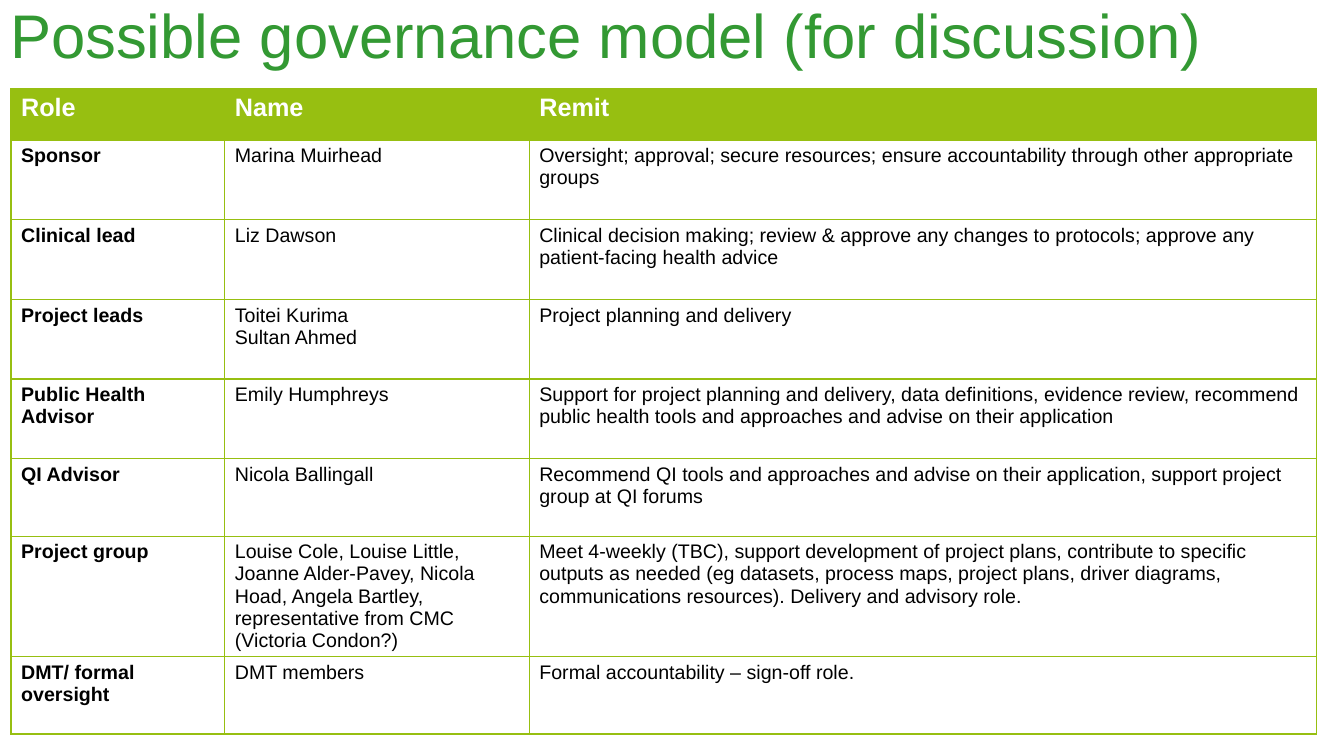
from dataclasses import dataclass

from lxml.etree import SubElement
from pptx import Presentation
from pptx.dml.color import RGBColor
from pptx.enum.text import MSO_ANCHOR, MSO_AUTO_SIZE, PP_ALIGN
from pptx.oxml.ns import qn
from pptx.util import Inches, Pt


@dataclass(frozen=True)
class Theme:
    font: str = "Arial"
    title_color: str = "339933"
    accent: str = "97BF11"
    header_text: str = "FFFFFF"
    body_text: str = "000000"
    title_size: int = 44
    header_size: int = 18
    body_size: int = 14
    border_width: int = 1


THEME = Theme()
TITLE = "Possible governance model (for discussion)"
COLUMN_WIDTHS = [2.12, 3.02, 7.81]
ROW_HEIGHTS = [0.51] + [0.79] * 4 + [0.77] * 3
GOVERNANCE_ROWS = [
    ("Role", "Name", "Remit"),
    ("Sponsor", "Marina Muirhead",
     "Oversight; approval; secure resources; ensure accountability through "
     "other appropriate groups"),
    ("Clinical lead", "Liz Dawson",
     "Clinical decision making; review & approve any changes to protocols; "
     "approve any patient-facing health advice"),
    ("Project leads", "Toitei Kurima\nSultan Ahmed",
     "Project planning and delivery"),
    ("Public Health Advisor", "Emily Humphreys",
     "Support for project planning and delivery, data definitions, evidence "
     "review, recommend public health tools and approaches and advise on "
     "their application"),
    ("QI Advisor", "Nicola Ballingall",
     "Recommend QI tools and approaches and advise on their application, "
     "support project group at QI forums"),
    ("Project group",
     "Louise Cole, Louise Little, Joanne Alder-Pavey, Nicola Hoad, Angela "
     "Bartley, representative from CMC (Victoria Condon?)",
     "Meet 4-weekly (TBC), support development of project plans, contribute "
     "to specific outputs as needed (eg datasets, process maps, project "
     "plans, driver diagrams, communications resources). Delivery and "
     "advisory role."),
    ("DMT/ formal oversight", "DMT members",
     "Formal accountability – sign-off role."),
]


def format_text(text_frame, size, color, bold=False):
    for paragraph in text_frame.paragraphs:
        paragraph.alignment = PP_ALIGN.LEFT
        for run in paragraph.runs:
            run.font.name = THEME.font
            run.font.size = Pt(size)
            run.font.bold = bold
            run.font.color.rgb = RGBColor.from_string(color)


def add_cell_borders(cell):
    properties = cell._tc.get_or_add_tcPr()
    for position, side in enumerate(("a:lnL", "a:lnR", "a:lnT", "a:lnB")):
        line = SubElement(properties, qn(side), w=str(Pt(THEME.border_width)))
        fill = SubElement(line, qn("a:solidFill"))
        SubElement(fill, qn("a:srgbClr"), val=THEME.accent)
        properties.remove(line)
        properties.insert(position, line)


def place_title(slide, left, top, width, height):
    title = slide.shapes.title
    title.left, title.top = Inches(left), Inches(top)
    title.width, title.height = Inches(width), Inches(height)
    text_frame = title.text_frame
    text_frame.text = TITLE
    text_frame.word_wrap = True
    text_frame.auto_size = MSO_AUTO_SIZE.NONE
    text_frame.vertical_anchor = MSO_ANCHOR.TOP
    text_frame.paragraphs[0].line_spacing = 0.9
    format_text(text_frame, THEME.title_size, THEME.title_color)


def add_governance_table(slide, left, top, width, height):
    frame = slide.shapes.add_table(
        len(GOVERNANCE_ROWS), len(COLUMN_WIDTHS),
        Inches(left), Inches(top), Inches(width), Inches(height))
    table = frame.table
    table.horz_banding = False
    for column, column_width in zip(table.columns, COLUMN_WIDTHS):
        column.width = Inches(column_width)
    for row, row_height in zip(table.rows, ROW_HEIGHTS):
        row.height = Inches(row_height)
    for row_index, texts in enumerate(GOVERNANCE_ROWS):
        for column_index, text in enumerate(texts):
            cell = table.cell(row_index, column_index)
            cell.text_frame.text = text
            if row_index == 0:
                cell.fill.solid()
                cell.fill.fore_color.rgb = RGBColor.from_string(THEME.accent)
                format_text(cell.text_frame, THEME.header_size,
                            THEME.header_text, True)
            else:
                cell.fill.background()
                format_text(cell.text_frame, THEME.body_size,
                            THEME.body_text, column_index == 0)
            add_cell_borders(cell)


def main():
    presentation = Presentation()
    presentation.slide_width = Inches(13.33)
    presentation.slide_height = Inches(7.5)
    slide = presentation.slides.add_slide(presentation.slide_layouts[5])
    place_title(slide, 0, 0, 13.43, 1.45)
    add_governance_table(slide, 0.11, 0.88, sum(COLUMN_WIDTHS),
                         sum(ROW_HEIGHTS))
    presentation.save("out.pptx")


if __name__ == "__main__":
    main()
